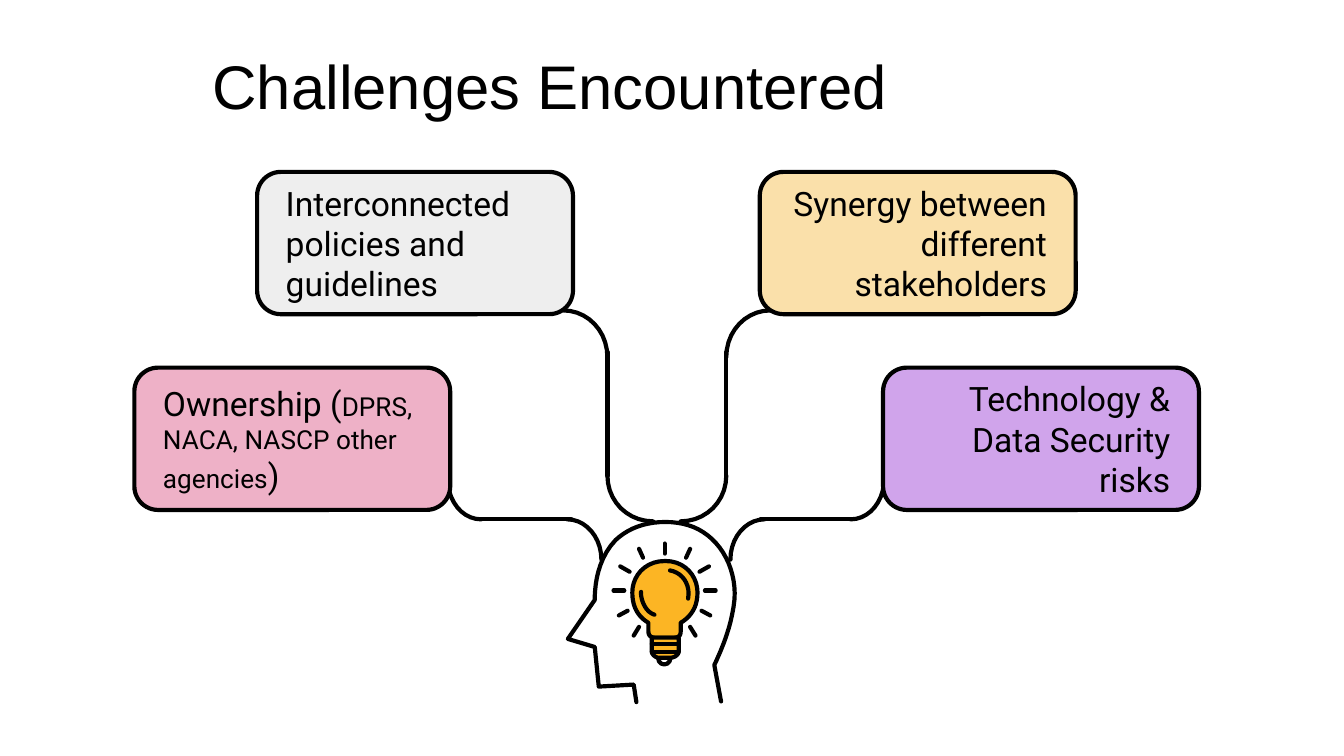
"""Build the Challenges Encountered slide: four cards linked to a thinking head."""
from dataclasses import dataclass

from lxml.etree import SubElement
from pptx import Presentation
from pptx.dml.color import RGBColor
from pptx.enum.shapes import MSO_CONNECTOR as Conn, MSO_SHAPE as Shape
from pptx.enum.text import MSO_ANCHOR as Anchor, MSO_AUTO_SIZE as AutoSize, PP_ALIGN as Align
from pptx.oxml.ns import qn
from pptx.util import Cm, Pt

UNIT = Cm(0.0254)
STROKE = Pt(2.25)
INK = "000000"
AMBER = "FCB524"
STEPS = 10


@dataclass
class Card:
    left: float
    top: float
    fill: str
    align: Align
    paragraphs: list[list[tuple[str, int]]]


@dataclass
class Curve:
    start: tuple[float, float]
    segments: list[tuple[float, ...]]
    fill: str | None = None


@dataclass
class Strand:
    axis: float
    bends: list[tuple[float, ...]]
    straight: tuple[float, ...]


CARDS = [
    Card(2.54, 6.95, "EEB1C7", Align.LEFT,
         [[("Ownership (", 18), ("DPRS, NACA, NASCP other agencies", 14), (")", 18)]]),
    Card(16.69, 6.95, "D0A4EB", Align.RIGHT,
         [[("Technology &", 18)], [("Data Security risks", 18)]]),
    Card(4.86, 3.25, "EEEEEE", Align.LEFT,
         [[("Interconnected policies and guidelines", 18)]]),
    Card(14.36, 3.25, "FAE0AA", Align.RIGHT,
         [[("Synergy between different stakeholders", 18)]]),
]

STRANDS = [
    Strand(496.2, [(419, 231, 437, 231, 452, 246, 452, 266),
                   (452, 354, 452, 373, 467, 388, 486, 388)], (452, 262, 452, 354)),
    Strand(495.5, [(333, 355.5, 333, 373, 344, 386.5, 358, 386.5),
                   (422, 386.5, 436, 386.5, 447.5, 400, 447.5, 416.5)],
           (358, 386.5, 425, 386.5)),
]

HEAD = Curve((473.5, 522.5), [
    (471.5, 509.5), (445.5, 511), (442.5, 481.5), (422.5, 475.5), (442.5, 446.5),
    (442.5, 435.5, 444.5, 416, 458, 402), (467, 393.5, 479.5, 388.5, 495, 388.5),
    (510.5, 388.5, 523, 393.5, 532.5, 404), (542.5, 415, 547.5, 430.5, 546.5, 446),
    (544.5, 465.5, 537.5, 481.5, 533.5, 490.5), (532.5, 493, 531.5, 494.5, 531.5, 495),
    (536.5, 522)])

BULB = [
    Curve((495, 417.5), [
        (479.5, 417.5, 470.5, 429, 470.5, 441), (470.5, 452, 475, 459, 482.5, 463.5),
        (482.5, 470), (482.5, 473, 484.5, 474.5, 487, 474.5), (502, 474.5),
        (505, 474.5, 506.5, 473, 506.5, 470), (506.5, 463.5),
        (514, 459, 519, 452, 519, 441), (519, 429, 510, 417.5, 495, 417.5)], AMBER),
    Curve((485, 474.5), [
        (485, 485), (485, 487, 488, 489.5, 490, 489.5), (499, 489.5),
        (502, 489.5, 505, 487, 505, 485), (505, 474.5)], AMBER),
    Curve((498.5, 424.5), [(507, 426, 514, 434, 512, 445.5)]),
    Curve((477, 440.5), [(476.5, 444, 479, 455, 487, 457.5)]),
]

BULB_AXIS = 494.5
SIDE_RAYS = [(475.5, 408.5, 478.5, 415), (461.5, 421.5, 468.5, 425.5),
             (456.5, 439.5, 464.5, 439.5), (460.5, 458, 467, 454.5),
             (471.5, 473, 475.5, 466.5)]
THREADS = [(485, 479.5, 505, 479.5), (485, 485, 505, 485)]


def rgb(value: str) -> RGBColor:
    """Return the colour for a hex string."""
    return RGBColor.from_string(value)


def mirror(values: tuple[float, ...], axis: float) -> tuple[float, ...]:
    """Reflect the x values of a flat x, y sequence about a vertical axis."""
    return tuple(v if i % 2 else 2 * axis - v for i, v in enumerate(values))


def style(sp, fill: str | None) -> None:
    """Give a shape its fill and the common black outline."""
    sp.shadow.inherit = False
    if fill:
        sp.fill.solid()
        sp.fill.fore_color.rgb = rgb(fill)
    else:
        sp.fill.background()
    sp.line.color.rgb = rgb(INK)
    sp.line.width = STROKE


def sample(curve: Curve) -> list[tuple[float, float]]:
    """Turn straight and cubic segments into points."""
    points = [curve.start]
    for seg in curve.segments:
        if len(seg) == 2:
            points.append(seg)
            continue
        x0, y0 = points[-1]
        x1, y1, x2, y2, x3, y3 = seg
        for i in range(1, STEPS + 1):
            t = i / STEPS
            a, b, c, d = (1 - t) ** 3, 3 * t * (1 - t) ** 2, 3 * t * t * (1 - t), t ** 3
            points.append((a * x0 + b * x1 + c * x2 + d * x3,
                           a * y0 + b * y1 + c * y2 + d * y3))
    return points


def draw_curve(s, curve: Curve) -> None:
    """Draw a curve, closed when it has a fill."""
    points = [(x * UNIT, y * UNIT) for x, y in sample(curve)]
    builder = s.shapes.build_freeform(*points[0])
    builder.add_line_segments(points[1:], close=curve.fill is not None)
    sp = builder.convert_to_shape()
    style(sp, curve.fill)
    sp.line._get_or_add_ln().set("cap", "rnd")


def draw_line(s, ends: tuple[float, ...]) -> None:
    """Draw a straight stroke with round ends."""
    line = s.shapes.add_connector(Conn.STRAIGHT, *(round(v * UNIT) for v in ends))
    line.line.color.rgb = rgb(INK)
    line.line.width = STROKE
    line.line._get_or_add_ln().set("cap", "rnd")
    SubElement(line._element.spPr, qn("a:effectLst"))


def draw_strand(s, strand: Strand) -> None:
    """Draw a strand and its reflection on the other side of the head."""
    for bend in strand.bends:
        for side in (bend, mirror(bend, strand.axis)):
            draw_curve(s, Curve(side[:2], [side[2:]]))
    draw_line(s, strand.straight)
    draw_line(s, mirror(strand.straight, strand.axis))


def draw_card(s, card: Card) -> None:
    """Draw a rounded card with its text."""
    sp = s.shapes.add_shape(Shape.ROUNDED_RECTANGLE, Cm(card.left), Cm(card.top),
                            Cm(5.97), Cm(2.69))
    style(sp, card.fill)
    tf = sp.text_frame
    tf.word_wrap = True
    tf.vertical_anchor = Anchor.MIDDLE
    tf.margin_left = tf.margin_right = Cm(0.41)
    tf.margin_top = tf.margin_bottom = 0
    for i, runs in enumerate(card.paragraphs):
        p = tf.add_paragraph() if i else tf.paragraphs[0]
        p.alignment = card.align
        for text, size in runs:
            r = p.add_run()
            r.text = text
            r.font.name = "Roboto"
            r.font.size = Pt(size)
            r.font.color.rgb = rgb(INK)


def draw_title(s, text: str) -> None:
    """Place and format the title."""
    sp = s.shapes.title
    sp.left, sp.top, sp.width, sp.height = Cm(0), Cm(0.13), Cm(20.78), Cm(3.12)
    tf = sp.text_frame
    tf.text = text
    tf.auto_size = AutoSize.NONE
    tf.vertical_anchor = Anchor.MIDDLE
    p = tf.paragraphs[0]
    p.alignment = Align.CENTER
    p.line_spacing = 0.9
    r = p.runs[0]
    r.font.name = "Arial"
    r.font.size = Pt(33)
    r.font.color.rgb = rgb(INK)


def main() -> None:
    """Build and save the slide."""
    prs = Presentation()
    prs.slide_width, prs.slide_height = Cm(25.4), Cm(14.29)
    s = prs.slides.add_slide(prs.slide_layouts[5])
    draw_title(s, "Challenges Encountered")
    for strand in STRANDS:
        draw_strand(s, strand)
    for card in CARDS:
        draw_card(s, card)
    draw_curve(s, HEAD)
    tip = s.shapes.add_shape(Shape.OVAL, Cm(12.44), Cm(12.33), Cm(0.23), Cm(0.23))
    style(tip, None)
    for part in BULB:
        draw_curve(s, part)
    rays = SIDE_RAYS + [mirror(ray, BULB_AXIS) for ray in SIDE_RAYS]
    for ends in THREADS + rays + [(BULB_AXIS, 404.5, BULB_AXIS, 412)]:
        draw_line(s, ends)
    prs.save("out.pptx")


if __name__ == "__main__":
    main()
